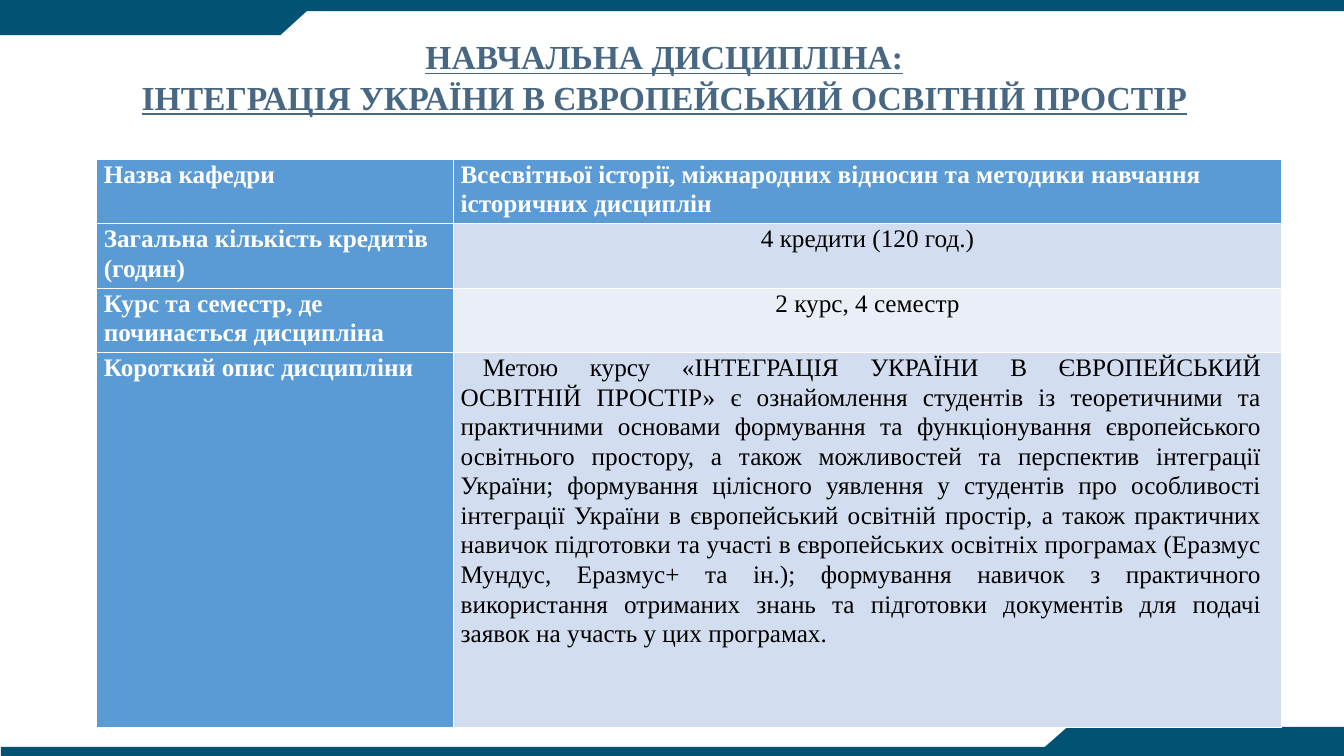
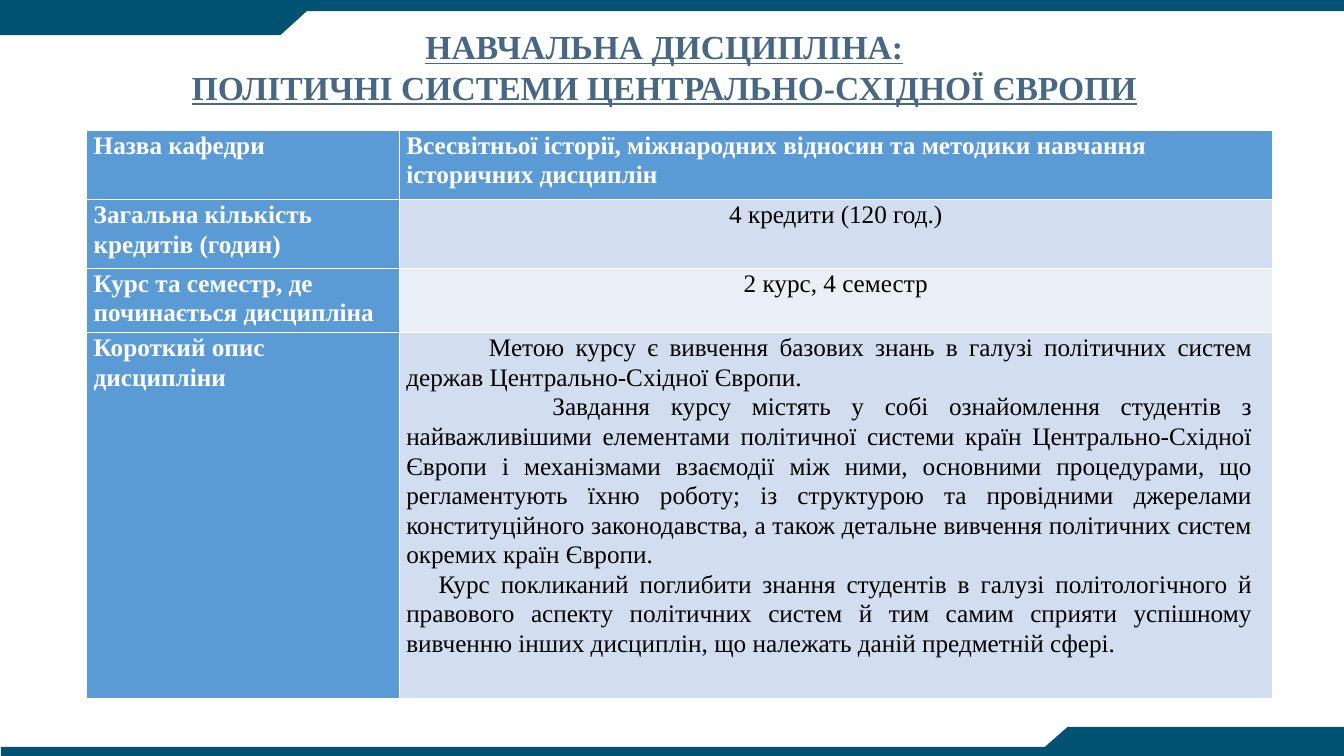
from pptx import Presentation
from pptx.dml.color import RGBColor
from pptx.enum.shapes import MSO_SHAPE as Shape
from pptx.enum.text import PP_ALIGN as Align
from pptx.util import Inches, Pt

BAND = RGBColor(0x02, 0x53, 0x73)
TITLE = RGBColor(0x48, 0x67, 0x82)
HEADER = RGBColor(0x5B, 0x9B, 0xD5)
ROW_DARK = RGBColor(0xD2, 0xDE, 0xEF)
ROW_LIGHT = RGBColor(0xEA, 0xEF, 0xF7)
WHITE = RGBColor(0xFF, 0xFF, 0xFF)
BLACK = RGBColor(0x00, 0x00, 0x00)
FONT = "Times New Roman"

BANDS = [
    (Shape.RECTANGLE, 0, 0, 13.33, 0.11, 0),
    (Shape.RECTANGLE, 0.01, 7.41, 13.32, 0.09, 0),
    (Shape.RECTANGLE, 0, 0.05, 2.78, 0.3, 0),
    (Shape.FLOWCHART_MERGE, 2.45, 0.05, 0.66, 0.3, 0),
    (Shape.RECTANGLE, 10.59, 7.21, 2.74, 0.29, 0),
    (Shape.FLOWCHART_MERGE, 10.26, 7.21, 0.66, 0.29, 180),
]

LABELS = [
    "Назва кафедри",
    "Загальна кількість кредитів (годин)",
    "Курс та семестр, де починається дисципліна",
    "Короткий опис дисципліни",
]
VALUES = [
    "Всесвітньої історії, міжнародних відносин та методики навчання історичних дисциплін",
    "4 кредити (120 год.)",
    "2 курс, 4 семестр",
]
VALUE_FILLS = [HEADER, ROW_DARK, ROW_LIGHT, ROW_DARK]

COURSES = [
    {
        "name": "ІНТЕГРАЦІЯ УКРАЇНИ В ЄВРОПЕЙСЬКИЙ ОСВІТНІЙ ПРОСТІР",
        "title_top": 0.31,
        "table_at": (0.96, 1.58),
        "columns": (3.54, 8.21),
        "rows": (0.64, 0.64, 0.63, 3.72),
        "description": [
            (0.22, "Метою курсу «ІНТЕГРАЦІЯ УКРАЇНИ В ЄВРОПЕЙСЬКИЙ ОСВІТНІЙ ПРОСТІР» є ознайомлення "
                   "студентів із теоретичними та практичними основами формування та функціонування "
                   "європейського освітнього простору, а також можливостей та перспектив інтеграції "
                   "України; формування цілісного уявлення у студентів про особливості інтеграції "
                   "України в європейський освітній простір, а також практичних навичок підготовки та "
                   "участі в європейських освітніх програмах (Еразмус Мундус, Еразмус+ та ін.); "
                   "формування навичок з практичного використання отриманих знань та підготовки "
                   "документів для подачі заявок на участь у цих програмах."),
        ],
    },
    {
        "name": "ПОЛІТИЧНІ СИСТЕМИ ЦЕНТРАЛЬНО-СХІДНОЇ ЄВРОПИ",
        "title_top": 0.21,
        "table_at": (0.86, 1.29),
        "columns": (3.1, 8.66),
        "rows": (0.69, 0.68, 0.64, 3.63),
        "description": [
            (0.82, "Метою курсу є вивчення базових знань в галузі політичних систем держав "
                   "Центрально-Східної Європи."),
            (1.45, "Завдання курсу містять у собі ознайомлення студентів з найважливішими елементами "
                   "політичної системи країн Центрально-Східної Європи і механізмами взаємодії між "
                   "ними, основними процедурами, що регламентують їхню роботу; із структурою та "
                   "провідними джерелами конституційного законодавства, а також детальне вивчення "
                   "політичних систем окремих країн Європи."),
            (0.32, "Курс покликаний поглибити знання студентів в галузі політологічного й правового "
                   "аспекту політичних систем й тим самим сприяти успішному вивченню інших дисциплін, "
                   "що належать даній предметній сфері."),
        ],
    },
]


def add_text(paragraph, text, size, color, bold, align):
    paragraph.alignment = align
    run = paragraph.add_run()
    run.text = text
    run.font.name = FONT
    run.font.size = Pt(size)
    run.font.bold = bold
    run.font.color.rgb = color
    return run


def fill_cell(cell, fill, paragraphs, color, bold, align):
    cell.fill.solid()
    cell.fill.fore_color.rgb = fill
    cell.margin_left = cell.margin_right = Inches(0.07)
    cell.margin_top = cell.margin_bottom = 0
    frame = cell.text_frame
    for index, (indent, text) in enumerate(paragraphs):
        paragraph = frame.add_paragraph() if index else frame.paragraphs[0]
        paragraph.line_spacing = 1.06
        if indent:
            paragraph._p.get_or_add_pPr().set("indent", str(Inches(indent)))
        add_text(paragraph, text, 18, color, bold, align)


presentation = Presentation()
presentation.slide_width = Inches(13.33)
presentation.slide_height = Inches(7.5)
blank = presentation.slide_layouts[6]
slides = [presentation.slides.add_slide(blank) for _ in COURSES]

master_tree = presentation.slide_master.shapes._spTree
for kind, left, top, width, height, rotation in BANDS:
    band = slides[0].shapes.add_shape(kind, Inches(left), Inches(top), Inches(width), Inches(height))
    band.rotation = rotation
    band.shadow.inherit = False
    band.fill.solid()
    band.fill.fore_color.rgb = BAND
    band.line.fill.background()
    master_tree.append(band._element)

for slide, course in zip(slides, COURSES):
    title = slide.shapes.add_textbox(Inches(0.56), Inches(course["title_top"]), Inches(12.06), Inches(0.91))
    title_frame = title.text_frame
    title_frame.word_wrap = True
    for index, line in enumerate(["НАВЧАЛЬНА ДИСЦИПЛІНА:", course["name"]]):
        paragraph = title_frame.add_paragraph() if index else title_frame.paragraphs[0]
        run = add_text(paragraph, line, 24, TITLE, True, Align.CENTER)
        run.font.underline = True

    left, top = course["table_at"]
    columns, rows = course["columns"], course["rows"]
    table = slide.shapes.add_table(len(rows), len(columns), Inches(left), Inches(top),
                                   Inches(sum(columns)), Inches(sum(rows))).table
    table.first_col = True
    for column, width in zip(table.columns, columns):
        column.width = Inches(width)
    for row, height in zip(table.rows, rows):
        row.height = Inches(height)

    for index, label in enumerate(LABELS):
        fill_cell(table.cell(index, 0), HEADER, [(0, label)], WHITE, True, Align.LEFT)

    fill_cell(table.cell(0, 1), VALUE_FILLS[0], [(0, VALUES[0])], WHITE, True, Align.LEFT)
    for index in (1, 2):
        fill_cell(table.cell(index, 1), VALUE_FILLS[index], [(0, VALUES[index])], BLACK, False, Align.CENTER)
    description = table.cell(3, 1)
    fill_cell(description, VALUE_FILLS[3], course["description"], BLACK, False, Align.JUSTIFY)
    description.margin_right = Inches(0.2)

presentation.save("out.pptx")
